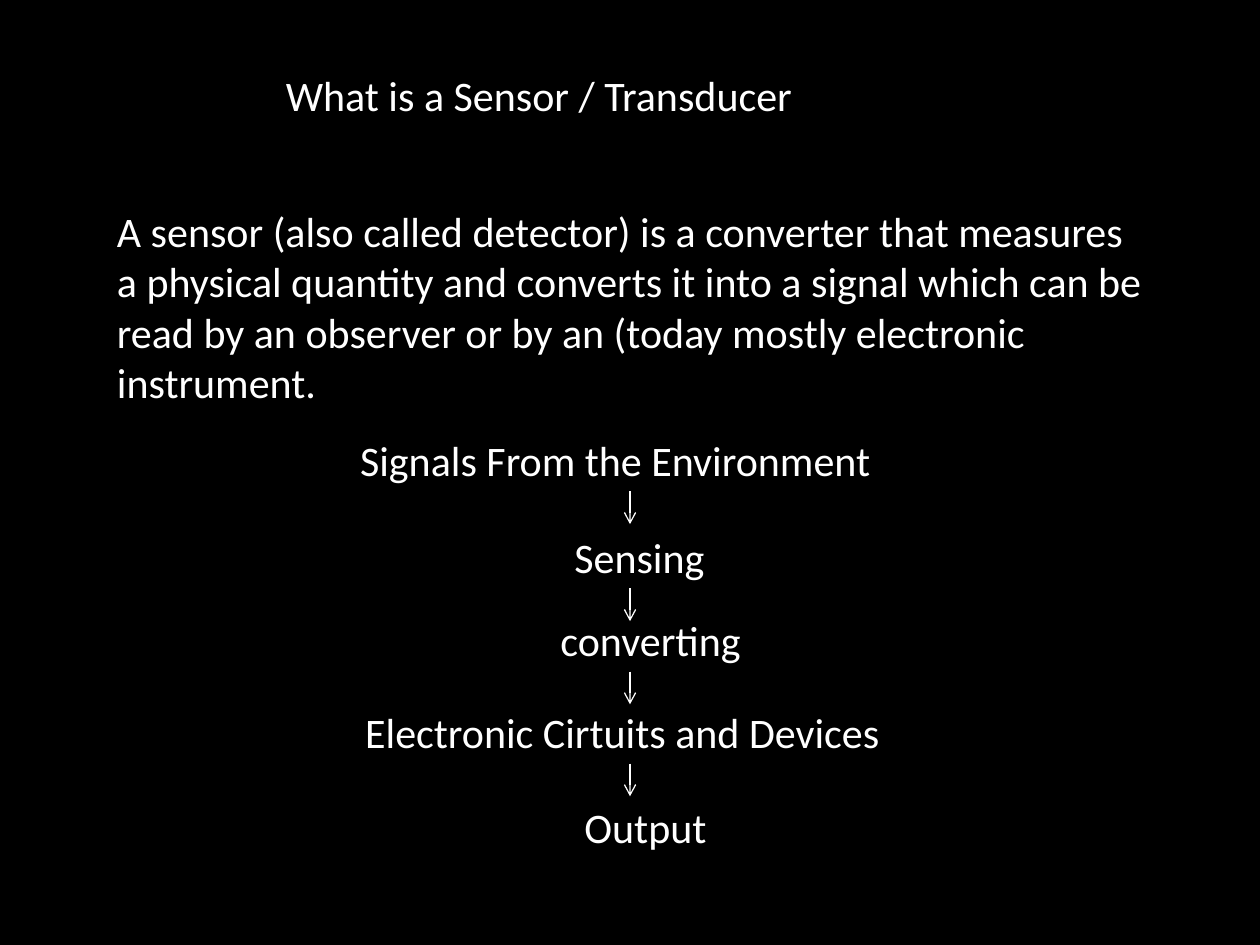
"""Build a slide that defines a sensor and shows its signal chain."""
from lxml.etree import SubElement
from pptx import Presentation
from pptx.dml.color import RGBColor
from pptx.enum.shapes import MSO_CONNECTOR
from pptx.enum.text import MSO_AUTO_SIZE
from pptx.oxml.ns import qn
from pptx.util import Inches, Pt

BLACK, WHITE = "000000", "FFFFFF"
LINE_HEIGHT = 0.5
ARROW_LENGTH = 0.26
ARROW_LEFT = 5

TITLE = ("What is a Sensor / Transducer", 2.17, 0.5, 6.58, LINE_HEIGHT)
DEFINITION = (
    "A sensor (also called detector) is a converter that measures "
    "a physical quantity and converts it into a signal which can be "
    "read by an observer or by an (today mostly electronic instrument.",
    0.83, 1.58, 8.33, 1.72,
)
STAGES = [
    ("Signals From the Environment", 2.76, 3.4, 4.47),
    ("Sensing", 4.46, 4.17, 1.45),
    ("converting", 4.35, 4.83, 1.74),
    ("Electronic Cirtuits and Devices", 2.8, 5.56, 5),
    ("Output", 4.54, 6.31, 1.3),
]


def color(value):
    return RGBColor.from_string(value)


def add_text(page, text, left, top, width, height):
    box = page.shapes.add_textbox(*map(Inches, (left, top, width, height)))
    frame = box.text_frame
    frame.word_wrap = True
    frame.auto_size = MSO_AUTO_SIZE.SHAPE_TO_FIT_TEXT
    frame.text = text
    font = frame.paragraphs[0].font
    font.name = "Calibri"
    font.size = Pt(24)
    font.color.rgb = color(WHITE)


def add_down_arrow(page, left, top):
    ends = (left, top, left, top + ARROW_LENGTH)
    arrow = page.shapes.add_connector(MSO_CONNECTOR.STRAIGHT, *map(Inches, ends))
    arrow.line.color.rgb = color(WHITE)
    arrow.line.width = Pt(0.75)
    SubElement(arrow.line._get_or_add_ln(), qn("a:tailEnd"), type="arrow")
    SubElement(arrow._element.spPr, qn("a:effectLst"))


def main():
    deck = Presentation()
    deck.slide_width, deck.slide_height = Inches(10), Inches(7.5)
    page = deck.slides.add_slide(deck.slide_layouts[6])
    page.background.fill.solid()
    page.background.fill.fore_color.rgb = color(BLACK)

    add_text(page, *TITLE)
    add_text(page, *DEFINITION)
    for text, left, top, width in STAGES:
        add_text(page, text, left, top, width, LINE_HEIGHT)
    for _, _, top, _ in STAGES[:-1]:
        add_down_arrow(page, ARROW_LEFT, top + LINE_HEIGHT)
    deck.save("out.pptx")


if __name__ == "__main__":
    main()
